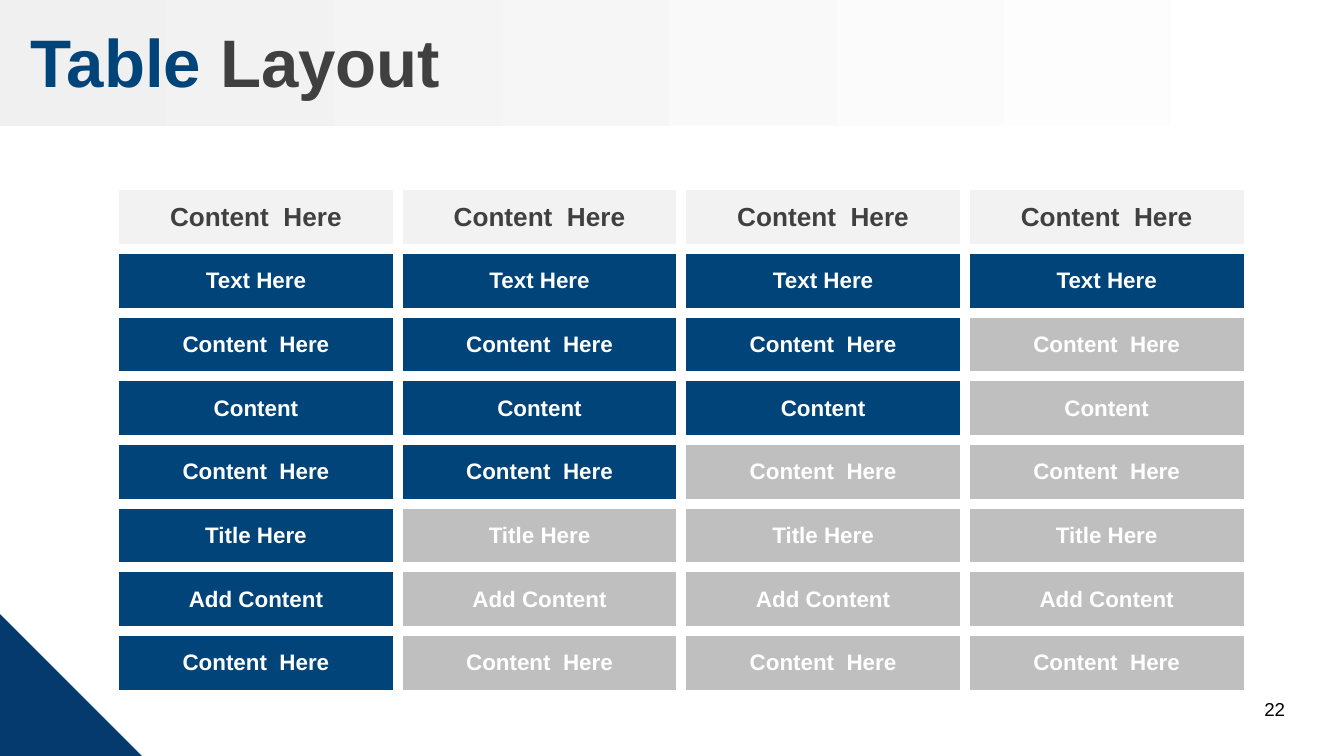
from dataclasses import dataclass

from lxml import etree
from pptx import Presentation
from pptx.dml.color import RGBColor
from pptx.enum.shapes import MSO_SHAPE
from pptx.enum.text import MSO_ANCHOR, MSO_AUTO_SIZE, PP_ALIGN
from pptx.oxml import parse_xml
from pptx.oxml.ns import nsdecls, qn
from pptx.util import Inches, Pt

RECTANGLE = MSO_SHAPE.RECTANGLE
RIGHT_TRIANGLE = MSO_SHAPE.RIGHT_TRIANGLE
MIDDLE = MSO_ANCHOR.MIDDLE
NO_FIT = MSO_AUTO_SIZE.NONE
LEFT, CENTER, RIGHT = PP_ALIGN.LEFT, PP_ALIGN.CENTER, PP_ALIGN.RIGHT
TITLE_ONLY = 5
PAGE_WIDTH = Inches(10)
PAGE_HEIGHT = PAGE_WIDTH * 9 // 16


@dataclass(frozen=True)
class Theme:
    """Colours, font and type sizes of the slide."""

    blue: str = "004479"
    navy: str = "053A6F"
    charcoal: str = "404040"
    gray: str = "BFBFBF"
    pale: str = "F2F2F2"
    band: str = "F0F0F0"
    white: str = "FFFFFF"
    black: str = "000000"
    font: str = "Arial"
    title_size: int = 36
    header_size: int = 14
    body_size: int = 12
    number_size: int = 10


THEME = Theme()
COLUMNS = 4
HEADER = "Content  Here"
ROWS = [
    ("Text Here", 4),
    ("Content  Here", 3),
    ("Content", 3),
    ("Content  Here", 2),
    ("Title Here", 1),
    ("Add Content", 1),
    ("Content  Here", 1),
]


def apply_format(target, values):
    """Set each attribute named in values on the target."""
    for name, value in values.items():
        setattr(target, name, value)


def add_span(para, text, size, color, bold=True):
    """Add a formatted run to a paragraph."""
    span = para.add_run()
    span.text = text
    apply_format(span.font, {"name": THEME.font, "size": Pt(size), "bold": bold})
    span.font.color.rgb = RGBColor.from_string(color)


def add_plain_shape(page, kind, left, top, width, height):
    """Add a preset shape without outline or inherited shadow."""
    shape = page.shapes.add_shape(
        kind, Inches(left), Inches(top), Inches(width), Inches(height)
    )
    shape.shadow.inherit = False
    shape.line.fill.background()
    return shape


def add_band(page):
    """Add the fading band behind the title."""
    band = add_plain_shape(page, RECTANGLE, 0, 0, 9.96, 0.94)
    band.fill.gradient()
    band.fill.gradient_angle = 0
    for stop, position, color in zip(
        band.fill.gradient_stops, (0, 1), (THEME.band, THEME.white)
    ):
        stop.position = position
        stop.color.rgb = RGBColor.from_string(color)
    page.shapes.title.element.addprevious(band.element)


def add_corner(page):
    """Add the navy corner triangle with its soft shadow."""
    corner = add_plain_shape(page, RIGHT_TRIANGLE, -0.01, 4.56, 1.07, 1.07)
    corner.fill.solid()
    corner.fill.fore_color.rgb = RGBColor.from_string(THEME.navy)
    effects = corner.element.spPr.find(qn("a:effectLst"))
    shadow = etree.SubElement(
        effects,
        qn("a:outerShdw"),
        blurRad=str(Pt(3.1)),
        dist=str(Pt(1.8)),
        dir="5400000",
        rotWithShape="0",
    )
    color = etree.SubElement(shadow, qn("a:srgbClr"), val=THEME.black)
    etree.SubElement(color, qn("a:alpha"), val="35000")
    page.shapes.title.element.addprevious(corner.element)


def fill_title(page):
    """Place the title and write its two colours."""
    title = page.shapes.title
    apply_format(title, {
        "left": Inches(0), "top": Inches(0.03),
        "width": PAGE_WIDTH, "height": Inches(0.85),
    })
    frame = title.text_frame
    apply_format(frame, {
        "vertical_anchor": MIDDLE, "auto_size": NO_FIT, "margin_left": Inches(0.23),
    })
    para = frame.paragraphs[0]
    para.alignment = LEFT
    add_span(para, "Table", THEME.title_size, THEME.blue)
    add_span(para, " Layout", THEME.title_size, THEME.charcoal)


def fill_cell(cell, text, size, color, fill):
    """Write one centred cell with thick white borders."""
    properties = cell._tc.get_or_add_tcPr()
    for side in ("lnL", "lnR", "lnT", "lnB"):
        properties.append(parse_xml(
            f'<a:{side} {nsdecls("a")} w="{Pt(6)}"><a:solidFill>'
            f'<a:srgbClr val="{THEME.white}"/></a:solidFill></a:{side}>'
        ))
    cell.fill.solid()
    cell.fill.fore_color.rgb = RGBColor.from_string(fill)
    cell.vertical_anchor = MIDDLE
    para = cell.text_frame.paragraphs[0]
    para.alignment = CENTER
    add_span(para, text, size, color)


def add_content_table(page):
    """Add the table, with the leading cells of each row in blue."""
    table = page.shapes.add_table(
        len(ROWS) + 1, COLUMNS,
        Inches(0.85), Inches(1.38), Inches(8.44), Inches(3.79),
    ).table
    for column in range(COLUMNS):
        fill_cell(
            table.cell(0, column), HEADER,
            THEME.header_size, THEME.charcoal, THEME.pale,
        )
        for row, (text, blue_count) in enumerate(ROWS, start=1):
            fill = THEME.blue if column < blue_count else THEME.gray
            fill_cell(
                table.cell(row, column), text, THEME.body_size, THEME.white, fill
            )


def add_page_number(page):
    """Add the page number at the lower right."""
    box = page.shapes.add_textbox(
        Inches(7.33), Inches(5.14), Inches(2.33), Inches(0.3)
    )
    box.text_frame.word_wrap = True
    para = box.text_frame.paragraphs[0]
    para.alignment = RIGHT
    add_span(para, "22", THEME.number_size, THEME.black, bold=False)


def main():
    """Build the slide and save the deck."""
    deck = Presentation()
    apply_format(deck, {"slide_width": PAGE_WIDTH, "slide_height": PAGE_HEIGHT})
    page = deck.slides.add_slide(deck.slide_layouts[TITLE_ONLY])
    add_band(page)
    add_corner(page)
    fill_title(page)
    add_content_table(page)
    add_page_number(page)
    deck.save("out.pptx")


if __name__ == "__main__":
    main()
